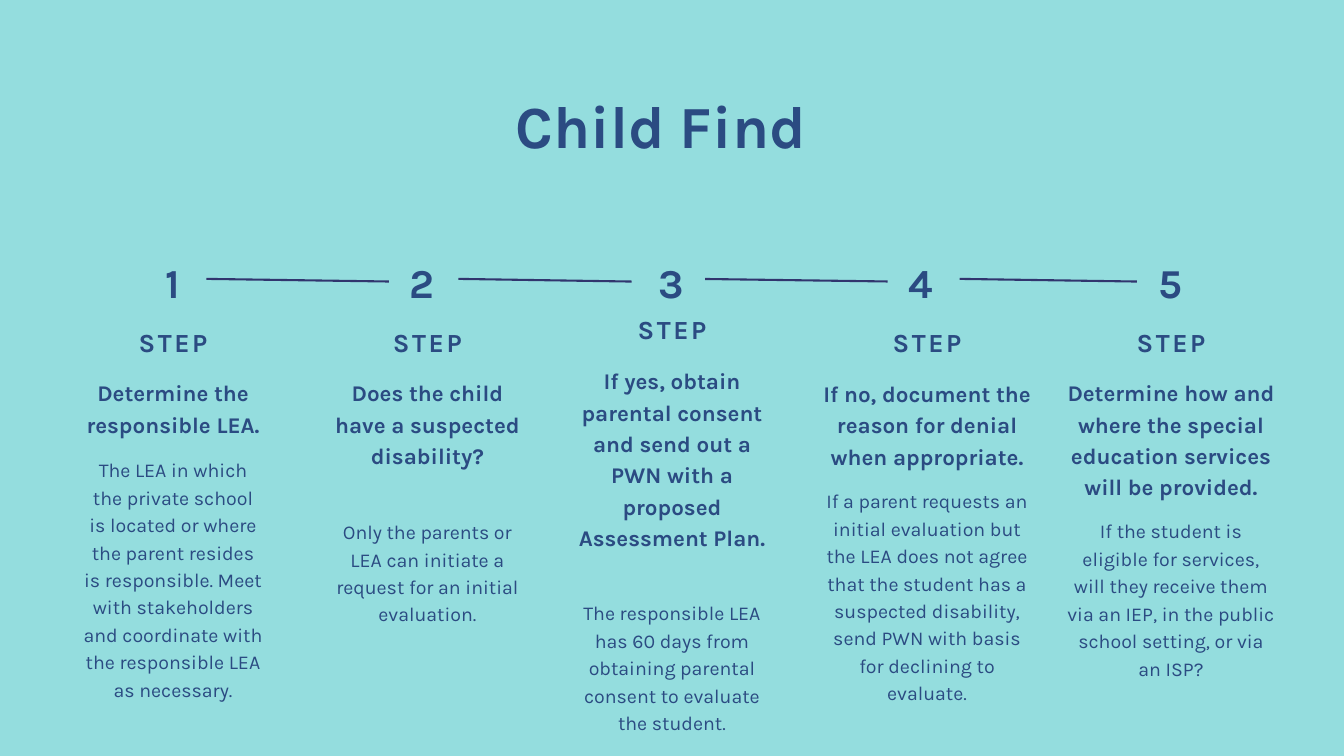
from dataclasses import dataclass

from lxml import etree
from pptx import Presentation
from pptx.dml.color import RGBColor
from pptx.enum.shapes import MSO_CONNECTOR, MSO_SHAPE
from pptx.enum.text import MSO_ANCHOR, MSO_AUTO_SIZE, PP_ALIGN
from pptx.oxml.ns import qn
from pptx.util import Inches, Pt

AQUA = RGBColor(0x94, 0xDD, 0xDE)
NAVY = RGBColor(0x2B, 0x4B, 0x82)
INDIGO = RGBColor(0x31, 0x35, 0x6E)

STRAIGHT = MSO_CONNECTOR.STRAIGHT
RECTANGLE = MSO_SHAPE.RECTANGLE
TOP, MIDDLE = MSO_ANCHOR.TOP, MSO_ANCHOR.MIDDLE
CENTER = PP_ALIGN.CENTER
NO_AUTOFIT = MSO_AUTO_SIZE.NONE

FONT = "Karla"
TITLE_ONLY = 5
NUMBER_LEFT, NUMBER_PITCH, NUMBER_WIDTH = 2.08, 3.71, 0.99
LINK_SPANS = [(3.07, 5.83), (6.82, 9.4), (10.39, 13.29), (14.28, 16.93)]


@dataclass
class TextStyle:
    size: float
    leading: float
    bold: bool = True
    tracking: float = 0
    anchor: MSO_ANCHOR = TOP


TITLE = TextStyle(64, 67.2)
NUMBER = TextStyle(44, 61.6, tracking=7.5, anchor=MIDDLE)
LABEL = TextStyle(28, 39.2, tracking=2.8)
HEADING = TextStyle(24, 33.6)
DETAIL = TextStyle(21, 29.4, bold=False)


@dataclass
class Step:
    left: float
    width: float
    label_top: float
    heading_top: float
    heading_height: float
    heading: str
    detail_top: float
    detail_height: float
    detail: str


STEPS = [
    Step(1.23, 2.69, 4.78, 5.58, 0.89, "Determine the responsible LEA.",
         6.76, 3.62,
         "The LEA in which the private school is located or where the parent "
         "resides is responsible. Meet with stakeholders and coordinate with "
         "the responsible LEA as necessary."),
    Step(4.97, 2.78, 4.78, 5.58, 1.35,
         "Does the child have a suspected disability?",
         7.68, 1.6,
         "Only the parents or LEA can initiate a request for an initial "
         "evaluation."),
    Step(8.55, 2.9, 4.59, 5.4, 2.74,
         "If yes, obtain parental consent and send out a PWN with a proposed "
         "Assessment Plan.",
         8.89, 2.02,
         "The responsible LEA has 60 days from obtaining parental consent to "
         "evaluate the student."),
    Step(12.25, 3.09, 4.78, 5.59, 1.35,
         "If no, document the reason for denial when appropriate.",
         7.22, 3.22,
         "If a parent requests an initial evaluation but the LEA does not "
         "agree that the student has a suspected disability, send PWN with "
         "basis for declining to evaluate."),
    Step(15.88, 3.09, 4.78, 5.58, 1.81,
         "Determine how and where the special education services will be "
         "provided.",
         7.67, 2.42,
         "If the student is eligible for services, will they receive them via "
         "an IEP, in the public school setting, or via an ISP?"),
]


class SlideBuilder:
    """Holds the current slide and draws each kind of element on it."""

    def __init__(self, slide):
        self.slide = slide
        background = slide.background.fill
        background.solid()
        background.fore_color.rgb = AQUA

    def set_text(self, holder, text, style):
        frame = holder.text_frame
        frame.word_wrap = True
        frame.auto_size = NO_AUTOFIT
        frame.vertical_anchor = style.anchor
        frame.margin_left = frame.margin_right = 0
        frame.margin_top = frame.margin_bottom = 0
        frame.text = text
        paragraph = frame.paragraphs[0]
        paragraph.alignment = CENTER
        paragraph.line_spacing = Pt(style.leading)
        run = paragraph.runs[0]
        run.font.name = FONT
        run.font.size = Pt(style.size)
        run.font.bold = style.bold
        run.font.color.rgb = NAVY
        if style.tracking:
            run._r.get_or_add_rPr().set("spc", str(round(style.tracking * 100)))

    def title(self, text, left, top, width, height):
        title = self.slide.shapes.title
        title.left, title.top = Inches(left), Inches(top)
        title.width, title.height = Inches(width), Inches(height)
        self.set_text(title, text, TITLE)

    def text(self, text, style, left, top, width, height):
        box = self.slide.shapes.add_textbox(
            Inches(left), Inches(top), Inches(width), Inches(height))
        self.set_text(box, text, style)

    def link(self, start, end):
        line = self.slide.shapes.add_connector(
            STRAIGHT, Inches(start), Inches(4.15), Inches(end), Inches(4.19))
        line.line.color.rgb = INDIGO
        line.line.width = Pt(2.25)
        etree.SubElement(line._element.spPr, qn("a:effectLst"))

    def patch(self, left, top, width, height):
        """Draw a background-coloured tile that trims the link ends."""
        tile = self.slide.shapes.add_shape(
            RECTANGLE, Inches(left), Inches(top), Inches(width), Inches(height))
        tile.shadow.inherit = False
        tile.fill.solid()
        tile.fill.fore_color.rgb = AQUA
        tile.line.fill.background()

    def number(self, index):
        left = NUMBER_LEFT + index * NUMBER_PITCH
        if index:
            self.patch(left, 3.69, NUMBER_WIDTH, 0.97)
        self.text(str(index + 1), NUMBER, left, 3.6, NUMBER_WIDTH, 1.06)

    def step(self, step):
        self.text("STEP", LABEL, step.left, step.label_top, step.width, 0.51)
        self.text(step.heading, HEADING, step.left, step.heading_top,
                  step.width, step.heading_height)
        self.text(step.detail, DETAIL, step.left, step.detail_top,
                  step.width, step.detail_height)


def main():
    presentation = Presentation()
    presentation.slide_width = Inches(20)
    presentation.slide_height = Inches(11.25)
    layout = presentation.slide_layouts[TITLE_ONLY]
    builder = SlideBuilder(presentation.slides.add_slide(layout))

    builder.title("Child Find ", 1.12, 1.45, 17.65, 0.97)
    for start, end in LINK_SPANS:
        builder.link(start, end)
    for index, step in enumerate(STEPS):
        builder.number(index)
        builder.step(step)

    presentation.save("out.pptx")


if __name__ == "__main__":
    main()
